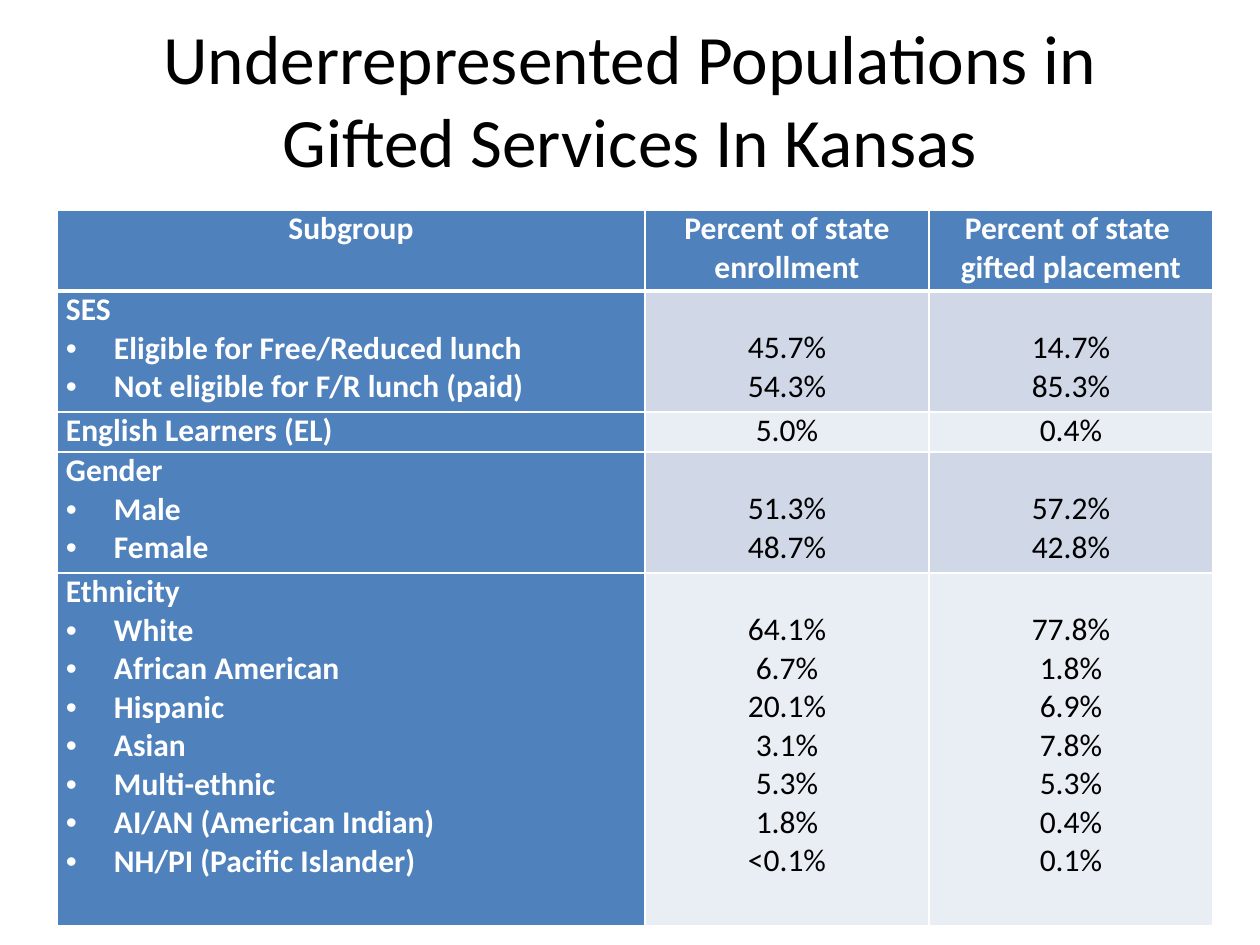
"""Build a slide comparing state enrollment with gifted placement by subgroup."""
import pptx
import pptx.dml.color
import pptx.enum.text
import pptx.oxml
import pptx.oxml.ns
import pptx.util

TITLE = "Underrepresented Populations in Gifted Services In Kansas"
HEADS = [["Subgroup"], ["Percent of state enrollment"], ["Percent of state ", "gifted placement"]]
GROUPS = [
    ("SES", [
        ("Eligible for Free/Reduced lunch", "45.7%", "14.7%"),
        ("Not eligible for F/R lunch (paid)", "54.3%", "85.3%"),
    ]),
    ("English Learners (EL)", [("", "5.0%", "0.4%")]),
    ("Gender", [("Male", "51.3%", "57.2%"), ("Female", "48.7%", "42.8%")]),
    ("Ethnicity", [
        ("White", "64.1%", "77.8%"),
        ("African American", "6.7%", "1.8%"),
        ("Hispanic", "20.1%", "6.9%"),
        ("Asian", "3.1%", "7.8%"),
        ("Multi-ethnic", "5.3%", "5.3%"),
        ("AI/AN (American Indian)", "1.8%", "0.4%"),
        ("NH/PI (Pacific Islander)", "<0.1%", "0.1%"),
    ]),
]
COLORS = {"blue": "4F81BD", "dark": "D0D8E8", "light": "E9EDF4", "white": "FFFFFF", "black": "000000"}
COLS = [588, 284, 284]
ROWS = [81, 121, 40, 121, 353]
LEFT, TOP = 57, 210
PAD, LINE, INDENT = 9, 38, 48
FONT = {"name": "Calibri", "size": pptx.util.Pt(18)}
ALIGN = pptx.enum.text.PP_ALIGN
ANCHOR = pptx.enum.text.MSO_ANCHOR


def px(n):
    return pptx.util.Emu(round(n * 914400 / 126))


def tint(name):
    return pptx.dml.color.RGBColor.from_string(COLORS[name])


def style(obj, values):
    for key, value in values.items():
        setattr(obj, key, value)


def write(para, text, color, align, **font):
    para.alignment = align
    run = para.add_run()
    run.text = text
    style(run.font, {**FONT, **font})
    run.font.color.rgb = tint(color)


def bullet(para):
    props = para._p.get_or_add_pPr()
    props.set("marL", str(px(INDENT)))
    props.set("indent", str(-px(INDENT)))
    space = pptx.oxml.ns.nsdecls("a")
    for tag in ('buFont {} typeface="Arial"', 'buChar {} char="•"'):
        props.append(pptx.oxml.parse_xml(f"<a:{tag.format(space)}/>"))


def border(cell, row):
    props = cell._tc.get_or_add_tcPr()
    for side in "LRTB":
        thick = (row, side) in ((0, "B"), (1, "T"))
        width = pptx.util.Pt(3 if thick else 1)
        props.append(pptx.oxml.parse_xml(
            f'<a:ln{side} {pptx.oxml.ns.nsdecls("a")} w="{width}"><a:solidFill>'
            f'<a:srgbClr val="{COLORS["white"]}"/></a:solidFill></a:ln{side}>'))


def fill(cell, row, col, lines, nested):
    label = row == 0 or col == 0
    drop = LINE if nested and col else 0
    border(cell, row)
    style(cell, {"margin_left": px(PAD), "margin_right": px(PAD), "margin_top": px(drop),
                 "margin_bottom": 0, "vertical_anchor": ANCHOR.TOP})
    cell.fill.solid()
    cell.fill.fore_color.rgb = tint("blue" if label else "dark" if row % 2 else "light")
    frame = cell.text_frame
    for i, line in enumerate(lines):
        para = frame.paragraphs[0] if i == 0 else frame.add_paragraph()
        if nested and col == 0 and i:
            bullet(para)
        write(para, line, "white" if label else "black",
              ALIGN.CENTER if row == 0 or col else ALIGN.LEFT, bold=label)


def main():
    deck = pptx.Presentation()
    style(deck, {"slide_width": px(1260), "slide_height": px(945)})
    slide = deck.slides.add_slide(deck.slide_layouts[5])
    title = slide.shapes.title
    style(title, {"left": px(63), "top": px(38), "width": px(1134), "height": px(120)})
    style(title.text_frame, {"word_wrap": True, "vertical_anchor": ANCHOR.MIDDLE,
                             "auto_size": pptx.enum.text.MSO_AUTO_SIZE.NONE})
    write(title.text_frame.paragraphs[0], TITLE, "black", ALIGN.CENTER, size=pptx.util.Pt(39.6))

    grid = slide.shapes.add_table(len(ROWS), len(COLS), px(LEFT), px(TOP),
                                  px(sum(COLS)), px(sum(ROWS))).table
    grid.horz_banding = False
    for col, width in zip(grid.columns, COLS):
        col.width = px(width)
    for row, height in zip(grid.rows, ROWS):
        row.height = px(height)
    for c, lines in enumerate(HEADS):
        fill(grid.cell(0, c), 0, c, lines, False)
    for r, (name, items) in enumerate(GROUPS, 1):
        names, *values = zip(*items)
        nested = any(names)
        labels = [name, *filter(None, names)]
        for c, lines in enumerate([labels, *values]):
            fill(grid.cell(r, c), r, c, lines, nested)
    deck.save("out.pptx")


if __name__ == "__main__":
    main()
